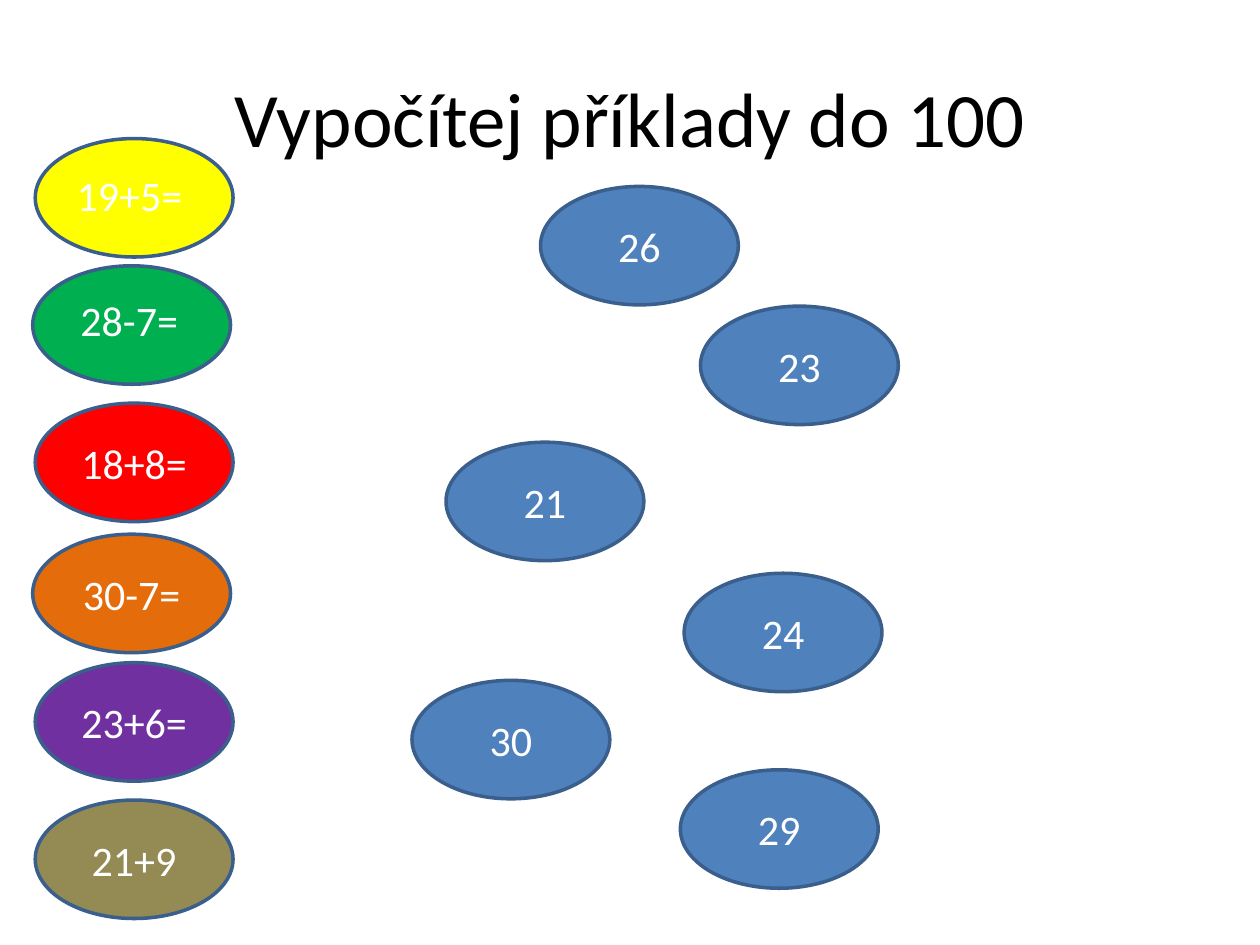
"""Build a matching exercise with sums on the left and results on the right."""
from pptx import Presentation
from pptx.dml.color import RGBColor
from pptx.enum.shapes import MSO_SHAPE as Shape
from pptx.enum.text import MSO_ANCHOR as Anchor, MSO_AUTO_SIZE as AutoSize, PP_ALIGN as Align
from pptx.util import Inches, Pt

BLACK = RGBColor(0x00, 0x00, 0x00)
WHITE = RGBColor(0xFF, 0xFF, 0xFF)
YELLOW = RGBColor(0xFF, 0xFF, 0x00)
GREEN = RGBColor(0x00, 0xB0, 0x50)
RED = RGBColor(0xFF, 0x00, 0x00)
ORANGE = RGBColor(0xE4, 0x6C, 0x0A)
PURPLE = RGBColor(0x70, 0x30, 0xA0)
OLIVE = RGBColor(0x94, 0x8A, 0x54)
BLUE = RGBColor(0x4F, 0x81, 0xBD)
OUTLINE = RGBColor(0x3A, 0x5F, 0x8C)


def write(box, text, size=24, color=WHITE, align=Align.CENTER, anchor=Anchor.MIDDLE):
    frame = box.text_frame
    frame.word_wrap = True
    frame.vertical_anchor = anchor
    para = frame.paragraphs[0]
    para.alignment = align
    span = para.add_run()
    span.text = text
    span.font.name = "Calibri"
    span.font.size = Pt(size)
    span.font.color.rgb = color


deck = Presentation()
deck.slide_width = Inches(10)
deck.slide_height = Inches(7.5)
page = deck.slides.add_slide(deck.slide_layouts[6])

title = page.shapes.add_textbox(Inches(0.5), Inches(0.3), Inches(9), Inches(1.25))
write(title, "Vypočítej příklady do 100", size=44, color=BLACK)

ovals = [
    (0.28, 1.1, YELLOW, ""),
    (0.26, 2.11, GREEN, ""),
    (0.28, 3.2, RED, "18+8="),
    (0.26, 4.24, ORANGE, "30-7="),
    (0.28, 5.26, PURPLE, "23+6="),
    (0.28, 6.35, OLIVE, "21+9"),
    (4.29, 1.48, BLUE, "26"),
    (5.56, 2.43, BLUE, "23"),
    (3.54, 3.51, BLUE, "21"),
    (5.43, 4.55, BLUE, "24"),
    (3.27, 5.4, BLUE, "30"),
    (5.4, 6.11, BLUE, "29"),
]
for left, top, color, text in ovals:
    oval = page.shapes.add_shape(
        Shape.OVAL, Inches(left), Inches(top), Inches(1.57), Inches(0.94)
    )
    oval.shadow.inherit = False
    oval.fill.solid()
    oval.fill.fore_color.rgb = color
    oval.line.color.rgb = OUTLINE
    oval.line.width = Pt(2)
    if text:
        write(oval, text)

for left, top, width, text in [(0.51, 1.3, 1.89, "19+5="), (0.54, 2.29, 1.18, "28-7=")]:
    label = page.shapes.add_textbox(Inches(left), Inches(top), Inches(width), Inches(0.5))
    write(label, text, align=Align.LEFT, anchor=Anchor.TOP)
    label.text_frame.auto_size = AutoSize.SHAPE_TO_FIT_TEXT

deck.save("out.pptx")
